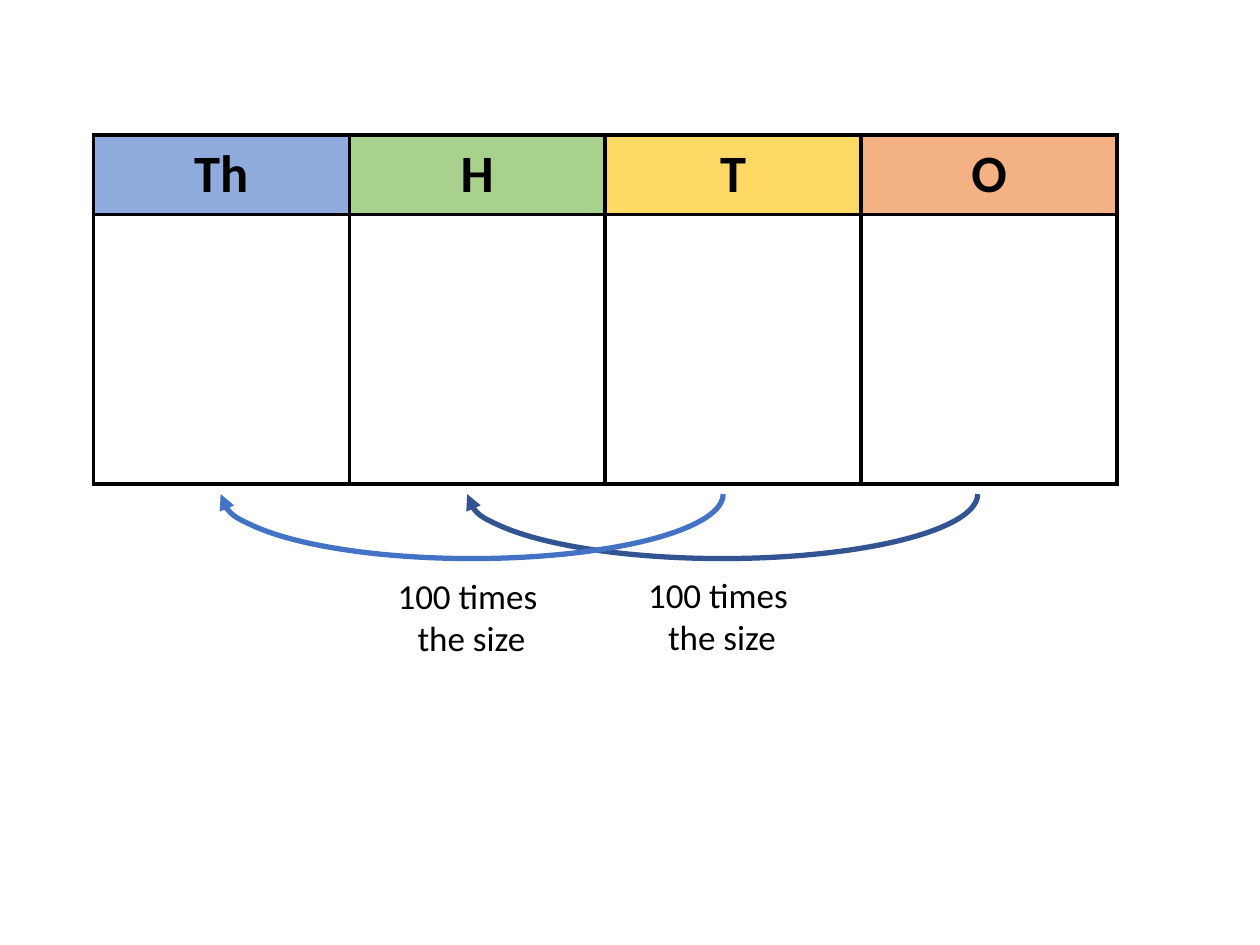
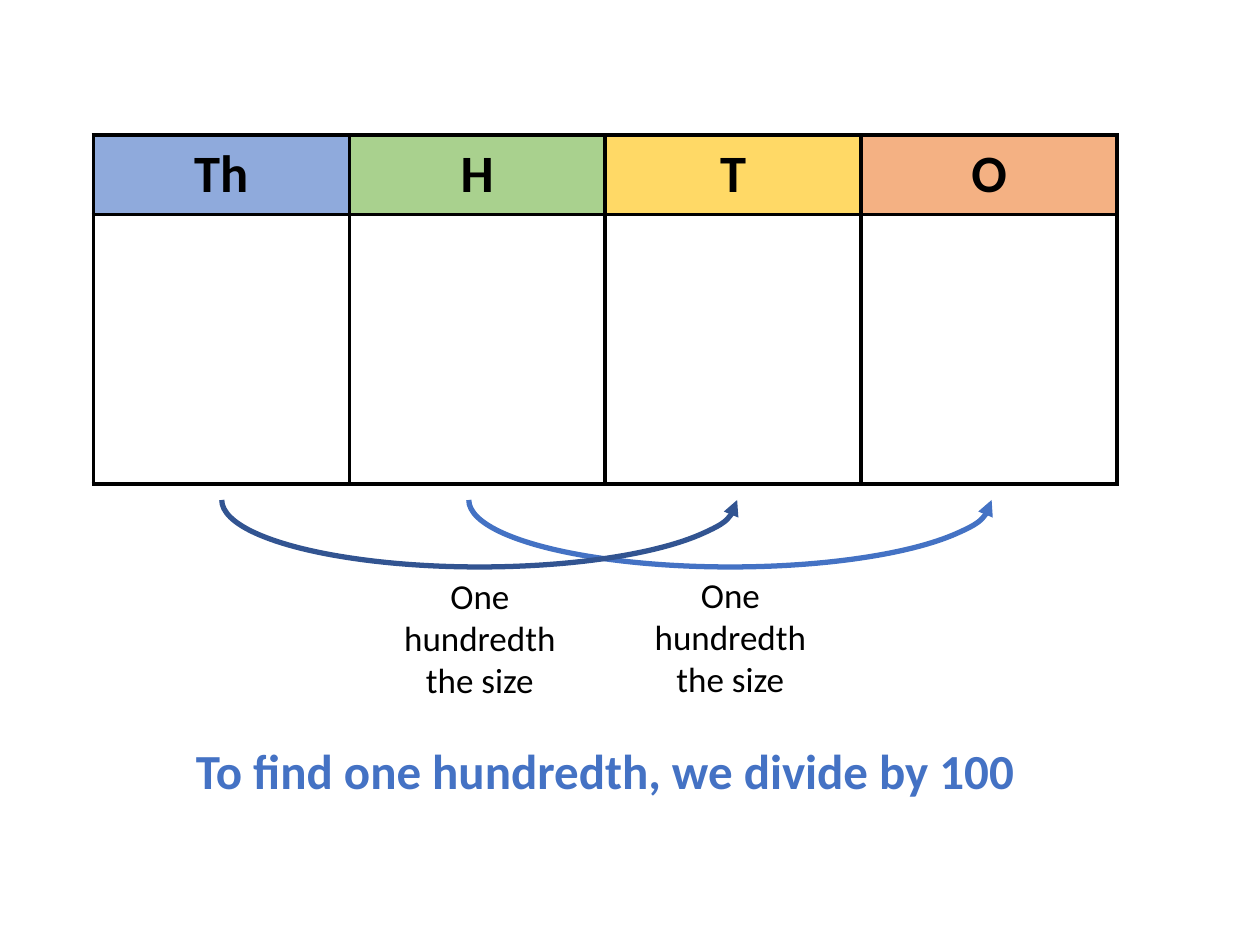
from dataclasses import dataclass

from lxml.etree import SubElement
from pptx import Presentation
from pptx.dml.color import RGBColor
from pptx.enum.shapes import MSO_SHAPE
from pptx.enum.text import MSO_ANCHOR, MSO_AUTO_SIZE, PP_ALIGN
from pptx.oxml.ns import qn
from pptx.util import Cm, Pt


@dataclass(frozen=True)
class Theme:
    font: str = "Calibri"
    black: str = "000000"
    blue: str = "4472C4"
    dark_blue: str = "325491"
    columns: tuple = (("Th", "8FAADC"), ("H", "A9D18E"),
                      ("T", "FFD966"), ("O", "F4B183"))
    heading_size: int = 30
    message_size: int = 28
    label_size: int = 20
    border_width: float = 2.25
    arc_width: float = 3


class SlideBuilder:
    def __init__(self, deck, theme):
        self.deck = deck
        self.theme = theme
        self.slide = None

    def new_slide(self):
        self.slide = self.deck.slides.add_slide(self.deck.slide_layouts[6])

    def fill_text(self, frame, lines, size, color, bold=False):
        """Fill a text frame with centred paragraphs."""
        formats = {"name": self.theme.font, "size": Pt(size), "bold": bold}
        for index, line in enumerate(lines):
            para = frame.add_paragraph() if index else frame.paragraphs[0]
            para.alignment = PP_ALIGN.CENTER
            span = para.add_run()
            span.text = line
            for name, value in formats.items():
                setattr(span.font, name, value)
            span.font.color.rgb = RGBColor.from_string(color)

    def text(self, lines, left, top, width, height, size, color, bold=False):
        box = self.slide.shapes.add_textbox(Cm(left), Cm(top), Cm(width), Cm(height))
        box.text_frame.word_wrap = True
        box.text_frame.auto_size = MSO_AUTO_SIZE.SHAPE_TO_FIT_TEXT
        self.fill_text(box.text_frame, lines, size, color, bold)

    def border(self, cell):
        properties = cell._tc.get_or_add_tcPr()
        for index, side in enumerate(("lnL", "lnR", "lnT", "lnB")):
            line = properties.makeelement(
                qn(f"a:{side}"), {"w": str(Pt(self.theme.border_width))})
            fill = SubElement(line, qn("a:solidFill"))
            SubElement(fill, qn("a:srgbClr"), val=self.theme.black)
            properties.insert(index, line)

    def place_value_table(self):
        theme = self.theme
        row_heights = (1.6, 5.44)
        column_width = 5.16
        count = len(theme.columns)
        table = self.slide.shapes.add_table(
            len(row_heights), count, Cm(1.88), Cm(2.72),
            Cm(column_width * count), Cm(sum(row_heights))).table
        table.first_row = table.horz_banding = False
        for row, height in zip(table.rows, row_heights):
            row.height = Cm(height)
        cell_format = {"vertical_anchor": MSO_ANCHOR.MIDDLE,
                       "margin_left": Cm(0.3), "margin_right": Cm(0.3),
                       "margin_top": Cm(0.15), "margin_bottom": Cm(0.15)}
        for index, (heading, color) in enumerate(theme.columns):
            table.columns[index].width = Cm(column_width)
            head, body = table.cell(0, index), table.cell(1, index)
            for name, value in cell_format.items():
                setattr(head, name, value)
            head.fill.solid()
            head.fill.fore_color.rgb = RGBColor.from_string(color)
            body.fill.background()
            self.fill_text(head.text_frame, [heading], theme.heading_size,
                           theme.black, bold=True)
            for cell in (head, body):
                self.border(cell)

    def arc(self, left, top, length, depth, color, to_left):
        """Draw a bracket turned on its side, as a curved arrow under the table."""
        kind = MSO_SHAPE.LEFT_BRACKET if to_left else MSO_SHAPE.RIGHT_BRACKET
        shape = self.slide.shapes.add_shape(
            kind, Cm(left + (length - depth) / 2), Cm(top + (depth - length) / 2),
            Cm(depth), Cm(length))
        shape.rotation = 90
        shape.adjustments[0] = length / depth / 2
        shape.shadow.inherit = False
        shape.fill.background()
        shape.line.color.rgb = RGBColor.from_string(color)
        shape.line.width = Pt(self.theme.arc_width)
        properties = shape.element.spPr
        if to_left:
            properties.find(qn("a:xfrm")).set("flipH", "1")
        SubElement(properties.find(qn("a:ln")), qn("a:headEnd"), type="triangle")

    def comparison(self, arcs, top, depth, to_left, lines, label_shift, label_height):
        """Add the table, its two arcs and the label under each arc."""
        theme = self.theme
        self.new_slide()
        self.place_value_table()
        for left, length, color in arcs:
            self.arc(left, top, length, depth, color, to_left)
        for left, label_top, width in ((12.5, 11.43, 4.11), (7.42, 11.46, 4.17)):
            self.text(lines, left + label_shift, label_top, width, label_height,
                      theme.label_size, theme.black)


def main():
    deck = Presentation()
    deck.slide_width, deck.slide_height = Cm(25.4), Cm(19.05)
    theme = Theme()
    builder = SlideBuilder(deck, theme)

    # Slide 1: one hundred times the size
    builder.comparison(
        arcs=((9.42, 10.29, theme.dark_blue), (4.45, 10.13, theme.blue)),
        top=9.96, depth=1.3, to_left=True,
        lines=["100 times ", "the size"], label_shift=0, label_height=1.96)

    # Slide 2: one hundredth the size
    builder.comparison(
        arcs=((9.45, 10.54, theme.blue), (4.47, 10.39, theme.dark_blue)),
        top=10.08, depth=1.35, to_left=False,
        lines=["One hundredth", "the size"], label_shift=0.17, label_height=2.82)
    builder.text(["To find one hundredth, we divide by 100"], 3.45, 14.81, 17.48, 1.45,
                 theme.message_size, theme.blue, bold=True)

    deck.save("out.pptx")


if __name__ == "__main__":
    main()
